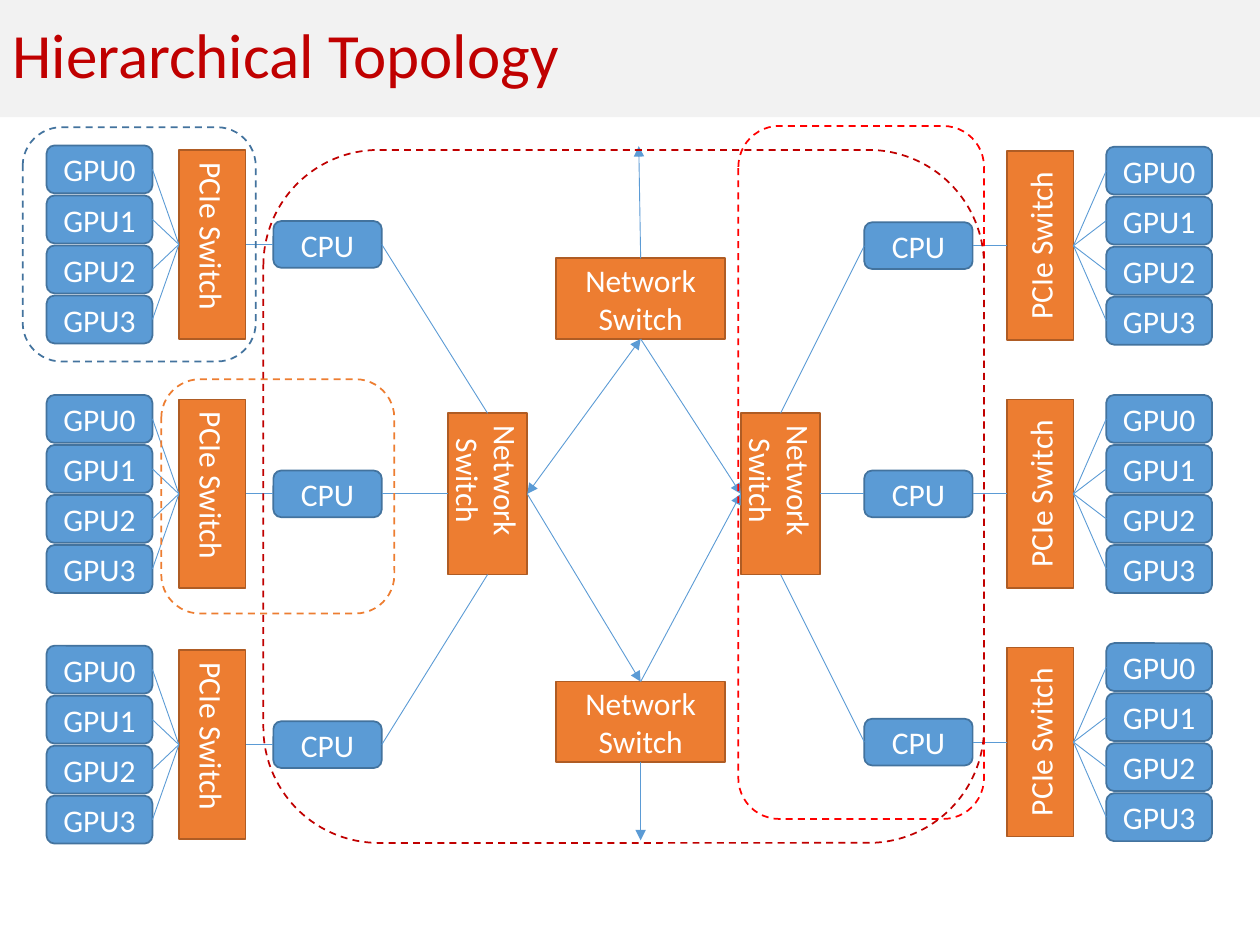
from pptx import Presentation
from pptx.dml.color import RGBColor
from pptx.enum.dml import MSO_LINE
from pptx.enum.shapes import MSO_CONNECTOR, MSO_SHAPE
from pptx.enum.text import MSO_ANCHOR, PP_ALIGN
from pptx.oxml.ns import qn
from pptx.oxml.xmlchemy import OxmlElement
from pptx.util import Inches, Pt

RECTANGLE = MSO_SHAPE.RECTANGLE
ROUNDED = MSO_SHAPE.ROUNDED_RECTANGLE
STRAIGHT = MSO_CONNECTOR.STRAIGHT
DASH = MSO_LINE.DASH
MIDDLE = MSO_ANCHOR.MIDDLE
LEFT_ALIGN, CENTER = PP_ALIGN.LEFT, PP_ALIGN.CENTER
TOP, LEFT, BOTTOM, RIGHT = range(4)

COLORS = {
    "banner": "F2F2F2", "title": "C00000", "text": "FFFFFF",
    "node": "5B9BD5", "node_edge": "43739E",
    "switch": "ED7D31", "switch_edge": "AF5C24",
    "link": "5B9BD5", "pod": "43739E", "host": "ED7D31",
    "cluster": "FF0000", "fabric": "C00000",
}


class TopologySlide:
    """Draws topology elements on a slide divided into 100 columns and 75 rows."""

    def __init__(self, presentation, font="Calibri", size=18):
        self.slide = presentation.slides.add_slide(presentation.slide_layouts[6])
        self.column = presentation.slide_width / 100
        self.row = presentation.slide_height / 75
        self.font, self.size = font, size

    def color(self, name):
        return RGBColor.from_string(COLORS[name])

    def point(self, x, y):
        return round(x * self.column), round(y * self.row)

    def box(self, kind, left, top, width, height, fill=None, edge=None):
        shape = self.slide.shapes.add_shape(
            kind, *self.point(left, top), *self.point(width, height))
        shape.shadow.inherit = False
        if fill:
            shape.fill.solid()
            shape.fill.fore_color.rgb = self.color(fill)
        else:
            shape.fill.background()
        if edge:
            shape.line.color.rgb = self.color(edge)
            shape.line.width = Pt(1)
        else:
            shape.line.fill.background()
        return shape

    def label(self, shape, text, color="text", size=None, align=CENTER):
        frame = shape.text_frame
        frame.word_wrap = True
        frame.vertical_anchor = MIDDLE
        paragraph = frame.paragraphs[0]
        paragraph.alignment = align
        run = paragraph.add_run()
        run.text = text
        run.font.name = self.font
        run.font.size = Pt(size or self.size)
        run.font.color.rgb = self.color(color)
        return paragraph

    def title(self, text):
        banner = self.box(RECTANGLE, 0, 0, 100, 9.3, "banner")
        self.label(banner, text, "title", 36, LEFT_ALIGN).line_spacing = 0.9

    def node(self, text, left, middle, width, height):
        shape = self.box(ROUNDED, left, middle - height / 2, width, height,
                         "node", "node_edge")
        self.label(shape, text)
        return shape

    def switch(self, text, left, middle, width, height, direction="horz"):
        shape = self.box(RECTANGLE, left, middle - height / 2, width, height,
                         "switch", "switch_edge")
        self.label(shape, text)
        shape.element.txBody.bodyPr.set("vert", direction)
        return shape

    def boundary(self, color, left, top, width, height):
        shape = self.box(ROUNDED, left, top, width, height, edge=color)
        shape.line.dash_style = DASH

    def link(self, start, start_side, end, end_side=None, arrows=()):
        target = (0, 0) if end_side is not None else self.point(*end)
        connector = self.slide.shapes.add_connector(STRAIGHT, 0, 0, *target)
        connector.begin_connect(start, start_side)
        if end_side is not None:
            connector.end_connect(end, end_side)
        connector.line.color.rgb = self.color("link")
        connector.line.width = Pt(0.5)
        properties = connector.element.spPr
        for name in arrows:
            arrow = OxmlElement(f"a:{name}")
            arrow.set("type", "triangle")
            properties.find(qn("a:ln")).append(arrow)
        properties.append(OxmlElement("a:effectLst"))

    def host(self, middle, columns, direction, outward, inward):
        gpu_left, pcie_left, cpu_left = columns
        gpus = [self.node(f"GPU{index}", gpu_left, middle + (index - 1.5) * 3.97, 8.4, 3.8)
                for index in range(4)]
        pcie = self.switch("PCIe Switch", pcie_left, middle, 5.3, 15, direction)
        cpu = self.node("CPU", cpu_left, middle, 8.6, 3.7)
        for gpu in gpus:
            self.link(gpu, inward, pcie, outward)
        self.link(pcie, inward, cpu, outward)
        return cpu

    def side(self, middles, columns, direction, outward, inward, switch_left):
        cpus = [self.host(middle, columns, direction, outward, inward)
                for middle in middles]
        switch = self.switch("Network Switch", switch_left, 39.2, 6.3, 12.8, "eaVert")
        for cpu, switch_side in zip(cpus, (TOP, outward, BOTTOM)):
            self.link(cpu, inward, switch, switch_side)
        return switch


def main():
    presentation = Presentation()
    presentation.slide_width, presentation.slide_height = Inches(10), Inches(7.5)
    topology = TopologySlide(presentation)
    topology.title("Hierarchical Topology")

    left = topology.side((19.4, 39.2, 59.1), (3.7, 14.2, 21.7),
                         "eaVert", LEFT, RIGHT, 35.55)
    right = topology.side((19.5, 39.2, 58.9), (87.8, 79.9, 68.6),
                          "vert270", RIGHT, LEFT, 58.8)
    upper, lower = [topology.switch("Network Switch", 44.15, middle, 13.4, 6.4)
                    for middle in (23.7, 57.3)]

    topology.link(left, RIGHT, upper, BOTTOM, ("headEnd", "tailEnd"))
    for start, start_side, end, end_side in (
            (left, RIGHT, lower, TOP),
            (upper, BOTTOM, right, LEFT),
            (lower, TOP, right, LEFT),
            (upper, TOP, (50.7, 11.6), None),
            (lower, BOTTOM, (50.85, 66.7), None)):
        topology.link(start, start_side, end, end_side, ("tailEnd",))

    topology.boundary("pod", 1.8, 10.1, 18.5, 18.6)
    topology.boundary("host", 12.8, 30.1, 18.5, 18.6)
    topology.boundary("cluster", 58.6, 10, 19.5, 55)
    topology.boundary("fabric", 20.9, 11.9, 57.2, 55)
    presentation.save("out.pptx")


if __name__ == "__main__":
    main()
